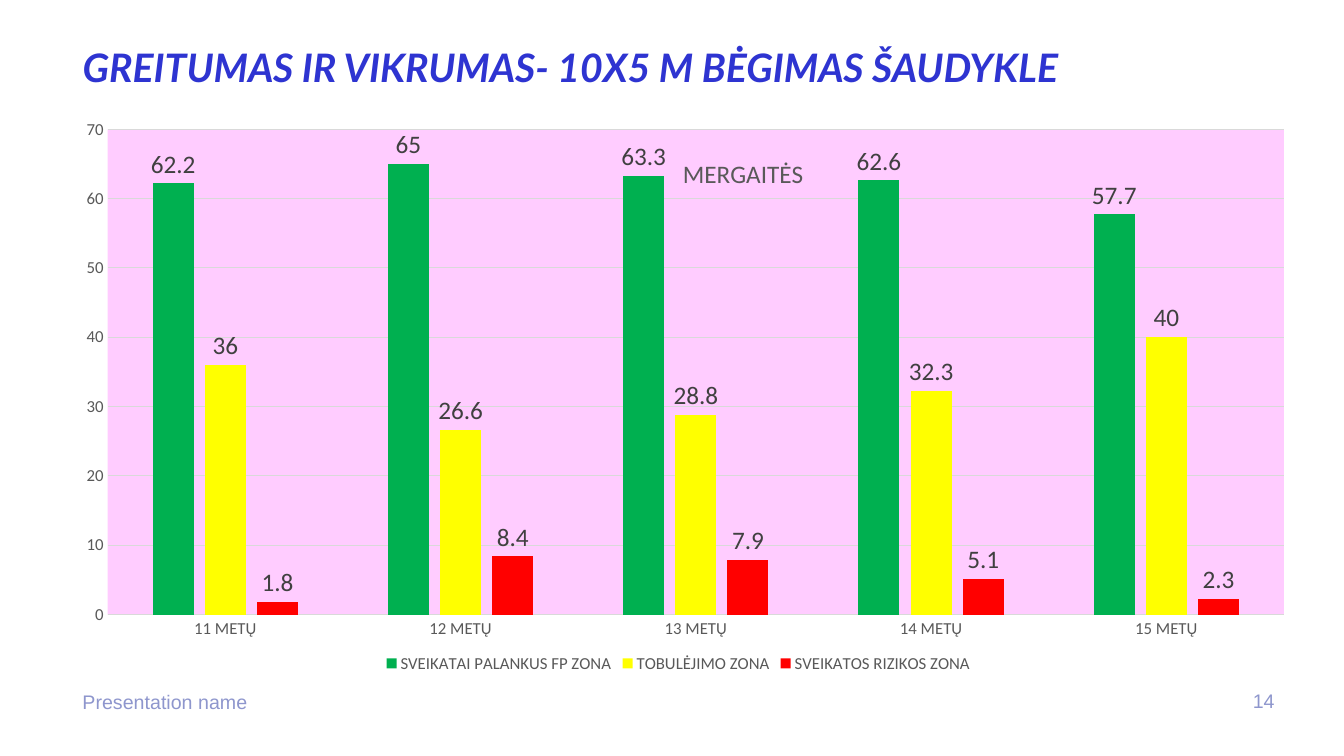
"""Build a slide with a clustered column chart of girls' shuttle run results."""
from dataclasses import dataclass

from pptx import Presentation
from pptx import util as u
from pptx.chart.data import CategoryChartData
from pptx.dml.color import RGBColor
from pptx.enum import chart as charts, text
from pptx.oxml import parse_xml
from pptx.oxml.ns import nsdecls, qn


@dataclass(frozen=True)
class Theme:
    title_font: str = "Lato"
    footer_font: str = "Arial"
    chart_font: str = "Calibri"
    title_color: str = "2E34D1"
    footer_color: str = "8E96CD"
    axis_color: str = "595959"
    label_color: str = "404040"
    grid_color: str = "D9D9D9"
    plot_color: str = "FFCCFF"
    zone_colors: tuple = ("00B050", "FFFF00", "FF0000")
    title_size: int = 28
    footer_size: int = 14
    label_size: int = 18
    axis_size: int = 12


AGES = [f"{age} METŲ" for age in range(11, 16)]
ZONES = {
    "SVEIKATAI PALANKUS FP ZONA": (62.2, 65, 63.3, 62.6, 57.7),
    "TOBULĖJIMO ZONA": (36, 26.6, 28.8, 32.3, 40),
    "SVEIKATOS RIZIKOS ZONA": (1.8, 8.4, 7.9, 5.1, 2.3),
}


class SlideBuilder:
    def __init__(self, slide, theme):
        self.slide = slide
        self.theme = theme

    def style(self, font, name, size, color, bold=False, italic=False):
        font.name = name
        font.size = u.Pt(size)
        font.color.rgb = RGBColor.from_string(color)
        font.bold = bold
        font.italic = italic

    def move(self, shape, left, top, width, height):
        shape.left, shape.top = u.Inches(left), u.Inches(top)
        shape.width, shape.height = u.Inches(width), u.Inches(height)

    def title(self, wording, *box):
        theme = self.theme
        shape = self.slide.shapes.title
        self.move(shape, *box)
        frame = shape.text_frame
        frame.text = wording
        frame.word_wrap = True
        frame.auto_size = text.MSO_AUTO_SIZE.NONE
        frame.vertical_anchor = text.MSO_ANCHOR.TOP
        paragraph = frame.paragraphs[0]
        paragraph.alignment = text.PP_ALIGN.LEFT
        paragraph.line_spacing = 0.9
        self.style(paragraph.runs[0].font, theme.title_font, theme.title_size,
                   theme.title_color, bold=True, italic=True)

    def footer(self, wording, alignment, *box):
        theme = self.theme
        shape = self.slide.shapes.add_textbox(*map(u.Inches, box))
        frame = shape.text_frame
        frame.word_wrap = True
        frame.text = wording
        paragraph = frame.paragraphs[0]
        paragraph.alignment = alignment
        self.style(paragraph.runs[0].font, theme.footer_font,
                   theme.footer_size, theme.footer_color)

    def set_layout(self, parent, index, target="", **fractions):
        for layout in parent.findall(qn("c:layout")):
            parent.remove(layout)
        modes = "".join(f'<c:{axis}Mode val="edge"/>' for axis in "xy")
        values = "".join(f'<c:{key} val="{value}"/>' for key, value in fractions.items())
        parent.insert(index, parse_xml(
            f'<c:layout {nsdecls("c")}><c:manualLayout>{target}{modes}{values}'
            '</c:manualLayout></c:layout>'))

    def chart_axis(self, axis):
        theme = self.theme
        axis.major_tick_mark = axis.minor_tick_mark = charts.XL_TICK_MARK.NONE
        self.style(axis.tick_labels.font, theme.chart_font, theme.axis_size, theme.axis_color)

    def grid_line(self, line):
        line.color.rgb = RGBColor.from_string(self.theme.grid_color)
        line.width = u.Pt(0.75)

    def chart_title(self, chart, wording):
        theme = self.theme
        frame = chart.chart_title.text_frame
        frame.text = wording
        self.style(frame.paragraphs[0].runs[0].font, theme.chart_font,
                   theme.label_size, theme.axis_color)
        element = chart.chart_title._element
        self.set_layout(element, 1, x=0.5, y=0.12)
        element.find(qn("c:overlay")).set("val", "1")

    def column_chart(self, heading, categories, series_values, *box):
        theme = self.theme
        data = CategoryChartData(number_format="General")
        data.categories = categories
        for name, values in series_values.items():
            data.add_series(name, values)
        chart = self.slide.shapes.add_chart(
            charts.XL_CHART_TYPE.COLUMN_CLUSTERED, *map(u.Inches, box), data).chart
        chart.font.name = theme.chart_font
        self.chart_title(chart, heading)

        chart.has_legend = True
        chart.legend.position = charts.XL_LEGEND_POSITION.BOTTOM
        chart.legend.include_in_layout = False
        self.style(chart.legend.font, theme.chart_font, theme.axis_size, theme.axis_color)

        self.chart_axis(chart.category_axis)
        self.grid_line(chart.category_axis.format.line)
        value_axis = chart.value_axis
        self.chart_axis(value_axis)
        value_axis.minimum_scale, value_axis.maximum_scale = 0, 70
        value_axis.major_unit = 10
        value_axis.format.line.fill.background()
        self.grid_line(value_axis.major_gridlines.format.line)

        plot = chart.plots[0]
        plot.gap_width, plot.overlap = 219, -27
        plot.vary_by_categories = False
        for series, color in zip(plot.series, theme.zone_colors):
            series.format.fill.solid()
            series.format.fill.fore_color.rgb = RGBColor.from_string(color)
            labels = series.data_labels
            labels.show_value = True
            labels.position = charts.XL_LABEL_POSITION.OUTSIDE_END
            self.style(labels.font, theme.chart_font, theme.label_size, theme.label_color)

        plot_area = chart._chartSpace.chart.plotArea
        self.set_layout(plot_area, 0, '<c:layoutTarget val="inner"/>',
                        x=0.029, y=0.083, w=0.971, h=0.812)
        plot_area.append(parse_xml(
            f'<c:spPr {nsdecls("c", "a")}><a:solidFill>'
            f'<a:srgbClr val="{theme.plot_color}"/></a:solidFill></c:spPr>'))


def main():
    presentation = Presentation()
    presentation.slide_width, presentation.slide_height = u.Inches(13.33), u.Inches(7.5)
    slide = presentation.slides.add_slide(presentation.slide_layouts[5])
    builder = SlideBuilder(slide, Theme())
    builder.title("GREITUMAS IR VIKRUMAS- 10X5 M BĖGIMAS ŠAUDYKLE", 0.72, 0.43, 12.02, 0.67)
    builder.footer("Presentation name", text.PP_ALIGN.LEFT, 0.72, 6.79, 6.3, 0.38)
    builder.footer("14", text.PP_ALIGN.RIGHT, 12.22, 6.79, 0.52, 0.4)
    builder.column_chart("MERGAITĖS", AGES, ZONES, 0.72, 0.79, 12.02, 5.93)
    presentation.save("out.pptx")


if __name__ == "__main__":
    main()
